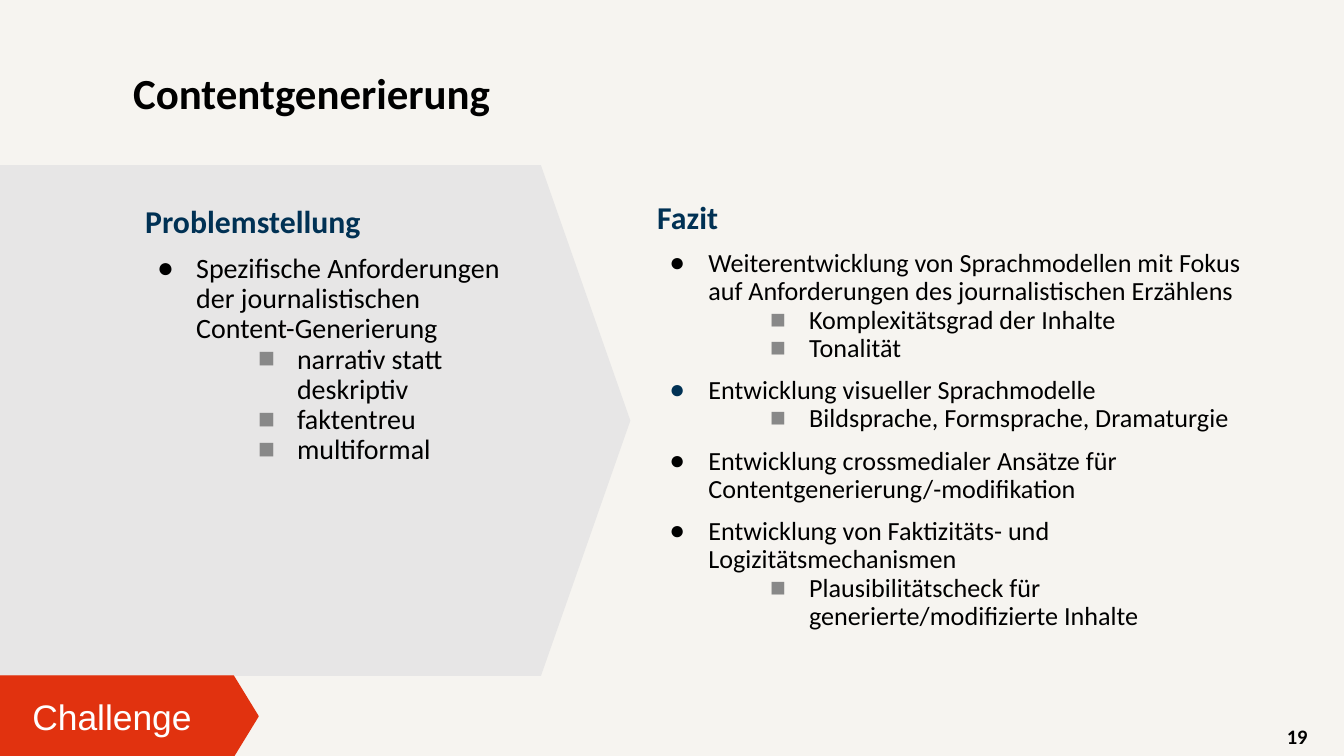
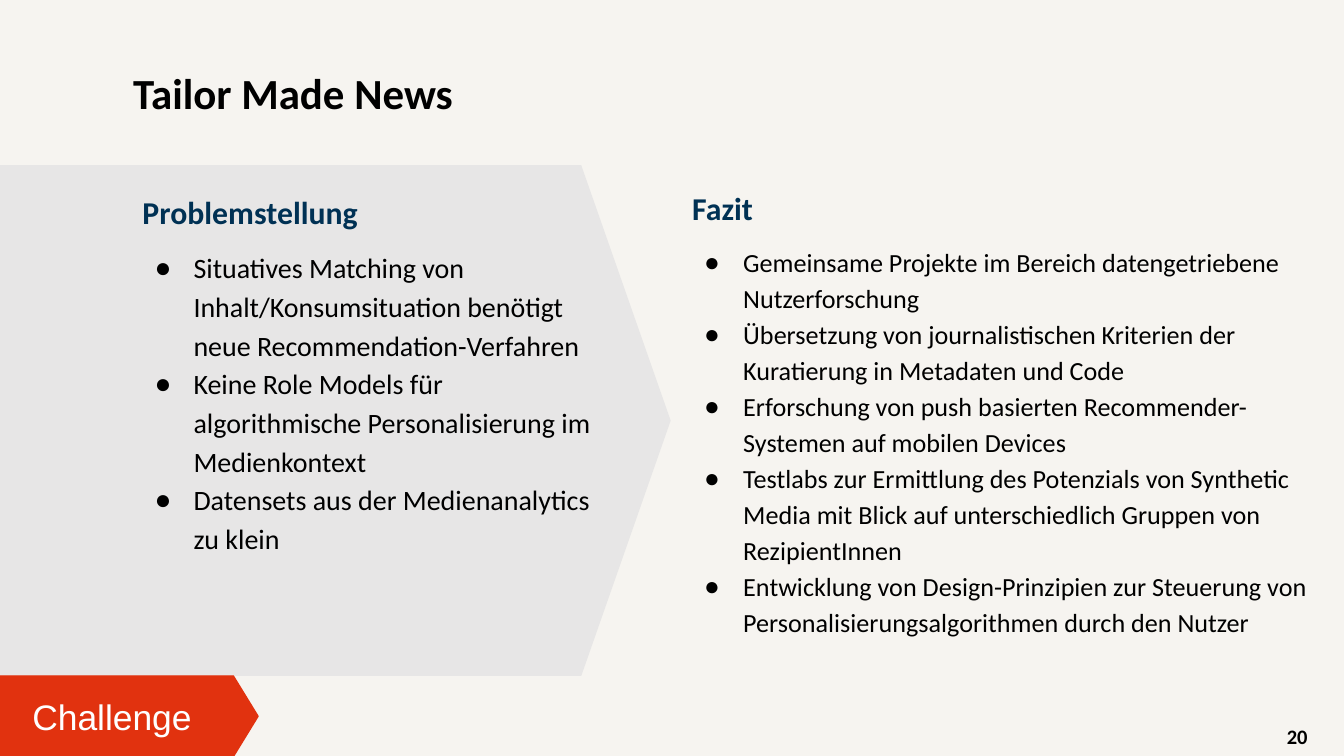
from dataclasses import dataclass
from typing import NamedTuple

from lxml import etree
from pptx import Presentation
from pptx import util as u
from pptx.dml.color import RGBColor
from pptx.enum import shapes, text
from pptx.oxml import ns


@dataclass(frozen=True)
class Theme:
    back: str = "F6F4F0"
    panel: str = "E7E6E6"
    accent: str = "E1320F"
    navy: str = "003154"
    ink: str = "000000"
    square: str = "888888"
    white: str = "FFFFFF"
    font: str = "Calibri"
    tag_font: str = "Arial"
    title: int = 23
    tag: int = 19
    head: int = 17
    number: int = 11
    gap: float = 7.5


THEME = Theme()


class Box(NamedTuple):
    left: float
    top: float
    width: float
    height: float


class Inset(NamedTuple):
    left: float = 0.07
    top: float = 0.04
    right: float = 0.07
    bottom: float = 0.04


class Style(NamedTuple):
    size: float
    color: str = THEME.ink
    bold: bool = False
    font: str = THEME.font


class Item(NamedTuple):
    text: str
    sub: bool = False
    dot: str = THEME.ink


@dataclass(frozen=True)
class Column:
    head: str
    box: Box
    size: int
    items: list[Item]
    grow: bool = False


@dataclass(frozen=True)
class Page:
    title: str
    number: int
    panel: float
    head_line: float
    item_line: float
    spread: bool  # space above every main item, not only the first
    columns: list[Column]


WIDTH = u.Inches(10)
HEIGHT = WIDTH * 9 // 16
TITLE = Box(0.92, 0.41, 8.62, 0.6)
NUMBER = Box(7.55, 5.33, 2.25, 0.3)
TAG = Box(0, 5.03, 1.92, 0.6)
TAG_TEXT = Box(0.17, 5.1, 1.45, 0.47)
PANEL_TOP, PANEL_HEIGHT = 1.23, 3.8
EVEN = Inset(0.07, 0.07, 0.07, 0.07)
BODY = Inset(right=0.89)

PAGES = [
    Page("Contentgenerierung", 19, 4.69, 1.15, 0.9, True, [
        Column("Fazit", Box(4.82, 1.39, 5.49, 3.98), 14, [
            Item("Weiterentwicklung von Sprachmodellen mit Fokus auf "
                 "Anforderungen des journalistischen Erzählens"),
            Item("Komplexitätsgrad der Inhalte", sub=True),
            Item("Tonalität", sub=True),
            Item("Entwicklung visueller Sprachmodelle", dot=THEME.navy),
            Item("Bildsprache, Formsprache, Dramaturgie", sub=True),
            Item("Entwicklung crossmedialer Ansätze für "
                 "Contentgenerierung/-modifikation"),
            Item("Entwicklung von Faktizitäts- und Logizitätsmechanismen"),
            Item("Plausibilitätscheck für generierte/modifizierte Inhalte",
                 sub=True),
        ]),
        Column("Problemstellung", Box(1.01, 1.39, 2.81, 2.52), 15, [
            Item("Spezifische Anforderungen der journalistischen "
                 "Content-Generierung"),
            Item("narrativ statt deskriptiv", sub=True),
            Item("faktentreu", sub=True),
            Item("multiformal", sub=True),
        ], grow=True),
    ]),
    Page("Tailor Made News", 20, 4.99, 0.9, 1.15, False, [
        Column("Problemstellung", Box(0.99, 1.43, 4.33, 3.99), 15, [
            Item("Situatives Matching von Inhalt/Konsumsituation benötigt "
                 "neue Recommendation-Verfahren"),
            Item("Keine Role Models für algorithmische Personalisierung im "
                 "Medienkontext"),
            Item("Datensets aus der Medienanalytics zu klein"),
        ]),
        Column("Fazit", Box(5.08, 1.37, 4.79, 3.65), 14, [
            Item("Gemeinsame Projekte im Bereich datengetriebene "
                 "Nutzerforschung"),
            Item("Übersetzung von journalistischen Kriterien der Kuratierung "
                 "in Metadaten und Code"),
            Item("Erforschung von push basierten Recommender-Systemen auf "
                 "mobilen Devices"),
            Item("Testlabs zur Ermittlung des Potenzials von Synthetic Media "
                 "mit Blick auf unterschiedlich Gruppen von RezipientInnen"),
            Item("Entwicklung von Design-Prinzipien zur Steuerung von "
                 "Personalisierungsalgorithmen durch den Nutzer"),
        ], grow=True),
    ]),
]


def inches(box: Box | Inset) -> list[u.Length]:
    return [u.Inches(side) for side in box]


def set_frame(frame, inset: Inset, middle: bool = False,
              grow: bool = False) -> None:
    frame.word_wrap = True
    frame.auto_size = (text.MSO_AUTO_SIZE.SHAPE_TO_FIT_TEXT if grow
                       else text.MSO_AUTO_SIZE.NONE)
    frame.vertical_anchor = (text.MSO_ANCHOR.MIDDLE if middle
                             else text.MSO_ANCHOR.TOP)
    (frame.margin_left, frame.margin_top,
     frame.margin_right, frame.margin_bottom) = inches(inset)


def add_box(slide, box: Box, inset: Inset, middle: bool = False,
            grow: bool = False):
    """Add a text box and return its frame."""
    frame = slide.shapes.add_textbox(*inches(box)).text_frame
    set_frame(frame, inset, middle, grow)
    return frame


def add_run(para, words: str, style: Style) -> None:
    run = para.add_run()
    run.text = words
    run.font.name = style.font
    run.font.size = u.Pt(style.size)
    run.font.bold = style.bold
    run.font.color.rgb = RGBColor.from_string(style.color)


def add_bullet(para, mark: str, color: str, indent: float) -> None:
    props = para._p.get_or_add_pPr()
    props.set("marL", str(u.Inches(indent)))
    props.set("indent", str(u.Inches(-0.29)))
    tint = etree.SubElement(props, ns.qn("a:buClr"))
    etree.SubElement(tint, ns.qn("a:srgbClr"), val=color)
    etree.SubElement(props, ns.qn("a:buFont"), typeface=THEME.tag_font)
    etree.SubElement(props, ns.qn("a:buChar"), char=mark)


def add_arrow(slide, box: Box, point: float, color: str,
              edge: bool = False) -> None:
    arrow = slide.shapes.add_shape(shapes.MSO_SHAPE.PENTAGON, *inches(box))
    arrow.adjustments[0] = point
    arrow.shadow.inherit = False
    arrow.fill.solid()
    arrow.fill.fore_color.rgb = RGBColor.from_string(color)
    if edge:
        arrow.line.color.rgb = RGBColor.from_string(color)
        arrow.line.width = u.Pt(0.75)
    else:
        arrow.line.fill.background()


def add_column(slide, page: Page, column: Column) -> None:
    frame = add_box(slide, column.box, EVEN if column.grow else BODY,
                    grow=column.grow)
    head = frame.paragraphs[0]
    head.line_spacing = page.head_line
    head.space_before = u.Pt(THEME.gap)
    add_run(head, column.head, Style(THEME.head, THEME.navy, True))
    for index, item in enumerate(column.items):
        para = frame.add_paragraph()
        para.line_spacing = page.item_line
        spaced = not item.sub and (page.spread or index == 0)
        para.space_before = u.Pt(THEME.gap if spaced else 0)
        if item.sub:
            para.level = 2
            add_bullet(para, "■", THEME.square, 1.13)
        else:
            add_bullet(para, "●", item.dot, 0.38)
        add_run(para, item.text, Style(column.size))


def add_title(slide, words: str) -> None:
    title = slide.shapes.title
    title.left, title.top, title.width, title.height = inches(TITLE)
    set_frame(title.text_frame, Inset(), middle=True)
    para = title.text_frame.paragraphs[0]
    para.alignment = text.PP_ALIGN.LEFT
    para.line_spacing = 0.9
    add_run(para, words, Style(THEME.title, bold=True))


def add_number(slide, number: int) -> None:
    para = add_box(slide, NUMBER, Inset(), middle=True).paragraphs[0]
    para.alignment = text.PP_ALIGN.RIGHT
    add_run(para, str(number), Style(THEME.number, bold=True))


def add_tag(slide) -> None:
    add_arrow(slide, TAG, 0.306, THEME.accent, edge=True)
    frame = add_box(slide, TAG_TEXT, EVEN, grow=True)
    add_run(frame.paragraphs[0], "Challenge",
            Style(THEME.tag, THEME.white, font=THEME.tag_font))


def add_page(deck, page: Page) -> None:
    slide = deck.slides.add_slide(deck.slide_layouts[5])
    slide.background.fill.solid()
    slide.background.fill.fore_color.rgb = RGBColor.from_string(THEME.back)
    add_arrow(slide, Box(0, PANEL_TOP, page.panel, PANEL_HEIGHT), 0.175,
              THEME.panel)
    add_title(slide, page.title)
    for column in page.columns:
        add_column(slide, page, column)
    add_number(slide, page.number)
    add_tag(slide)


def main() -> None:
    deck = Presentation()
    deck.slide_width, deck.slide_height = WIDTH, HEIGHT
    for page in PAGES:
        add_page(deck, page)
    deck.save("out.pptx")


if __name__ == "__main__":
    main()
